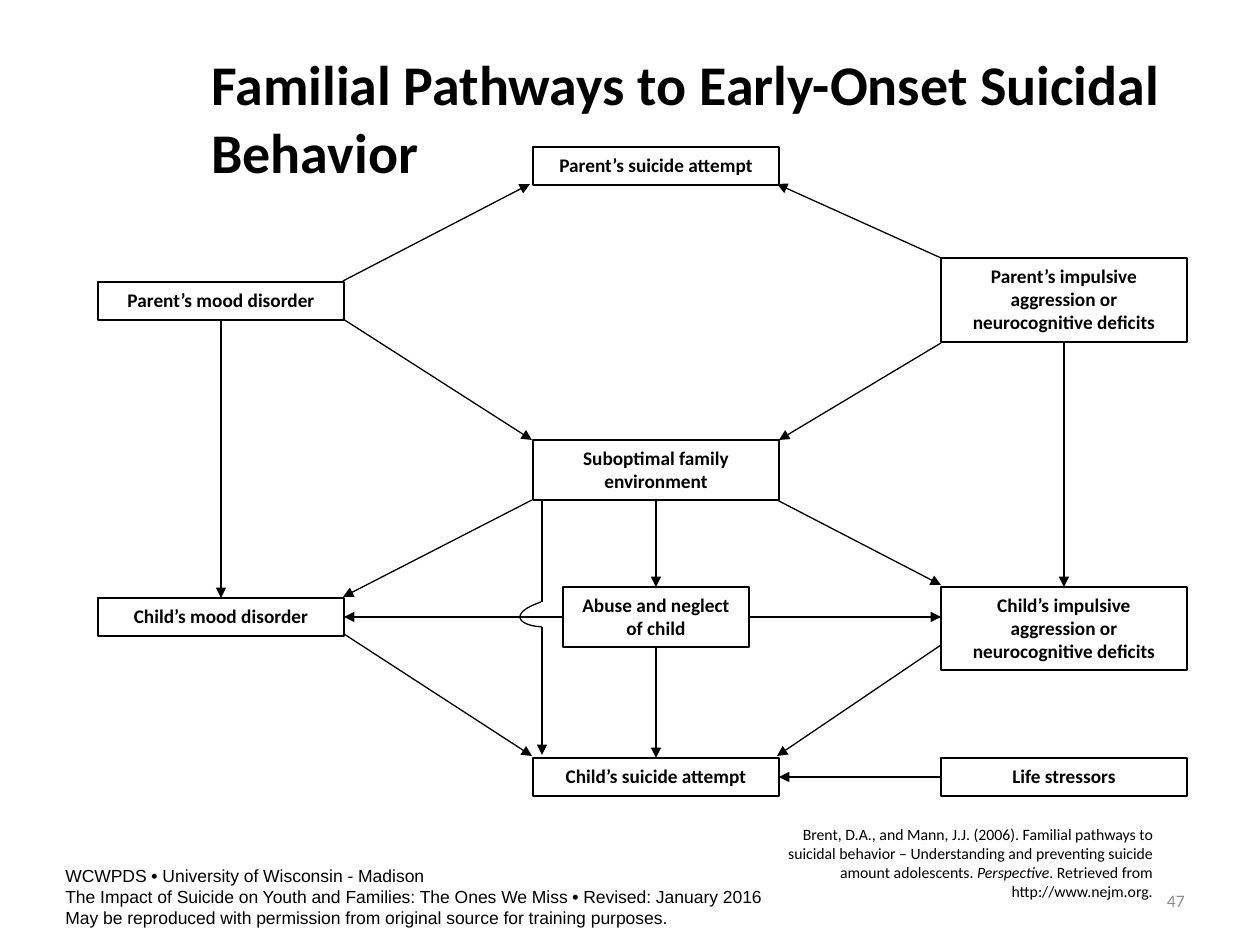
from lxml import etree
from pptx import Presentation
from pptx import util as u
from pptx.dml.color import RGBColor
from pptx.enum import shapes, text
from pptx.oxml.ns import qn

SCALE = 914400 / 126
TOP, LEFT, BOTTOM, RIGHT = range(4)
SIDE_W, SINGLE_H, DOUBLE_H = 246, 38, 60
COL_L, COL_M, COL_R = 98, 533, 941

BOXES = {
    "parent attempt": ("Parent’s suicide attempt", COL_M, 147, SIDE_W, SINGLE_H),
    "parent mood": ("Parent’s mood disorder", COL_L, 282, SIDE_W, SINGLE_H),
    "child mood": ("Child’s mood disorder", COL_L, 598, SIDE_W, SINGLE_H),
    "family": ("Suboptimal family environment", COL_M, 440, SIDE_W, DOUBLE_H),
    "abuse": ("Abuse and neglect of child", 563, 587, 186, DOUBLE_H),
    "child attempt": ("Child’s suicide attempt", COL_M, 758, SIDE_W, SINGLE_H),
    "stressors": ("Life stressors", COL_R, 758, SIDE_W, SINGLE_H),
    "child impulsive": ("Child’s impulsive aggression or neurocognitive deficits",
                        COL_R, 587, SIDE_W, 83),
    "parent impulsive": ("Parent’s impulsive aggression or neurocognitive deficits",
                         COL_R, 258, SIDE_W, 84),
}

ARROWS = [
    ((343, 281), (530, 184)),
    ((343, 319), (532, 440)),
    (("parent mood", BOTTOM), ("child mood", TOP)),
    ((532, 500), (343, 597)),
    ((344, 634), (532, 756)),
    ((777, 500), (941, 585)),
    ((941, 645), (777, 756)),
    (("stressors", LEFT), ("child attempt", RIGHT)),
    (("abuse", LEFT), ("child mood", RIGHT)),
    (("abuse", RIGHT), (941, 617)),
    (("family", BOTTOM), ("abuse", TOP)),
    ((542, 627), (542, 755)),
    (("abuse", BOTTOM), ("child attempt", TOP)),
    ((941, 258), (777, 184)),
    ((941, 343), (779, 440)),
    (("parent impulsive", BOTTOM), ("child impulsive", TOP)),
]
PLAIN_LINE = ((542, 500), (542, 602))
BRIDGE = [((542, 627), (528, 626), (520, 622), (520, 617)),
          ((520, 617), (520, 612), (527, 607), (541, 602))]

TITLE = [[("Familial Pathways to Early-Onset Suicidal Behavior", "b")]]
FOOTER = [
    [("WCWPDS ", ""), ("• ", "b"), ("University of Wisconsin - Madison", "")],
    [("The Impact of Suicide on Youth and Families: The Ones We Miss ", ""),
     ("• ", "b"), ("Revised: January 2016", "")],
    [("May be reproduced with permission from original source for training purposes.", "")],
]
CITATION = [[
    ("Brent, D.A., and Mann, J.J. (2006). Familial pathways to suicidal behavior – "
     "Understanding and preventing suicide amount adolescents. ", ""),
    ("Perspective", "i"),
    (". Retrieved from http://www.nejm.org.", ""),
]]


def px(n):
    return u.Emu(round(n * SCALE))


def color(value):
    return RGBColor.from_string(value)


def write(sp, paragraphs, size, align, anchor, font="Calibri", ink="000000", after=0):
    tf = sp.text_frame
    tf.word_wrap = True
    tf.vertical_anchor = anchor
    for i, runs in enumerate(paragraphs):
        p = tf.add_paragraph() if i else tf.paragraphs[0]
        p.alignment = align
        p.space_after = u.Pt(after)
        for words, style in runs:
            r = p.add_run()
            r.text = words
            r.font.name = font
            r.font.size = u.Pt(size)
            r.font.bold = style == "b"
            r.font.italic = style == "i"
            r.font.color.rgb = color(ink)


def textbox(s, place, *args, **kwargs):
    write(s.shapes.add_textbox(*map(px, place)), *args, **kwargs)


def outline(sp):
    sp.line.color.rgb = color("000000")
    sp.line.width = u.Pt(0.75)


def add_box(s, label, *place):
    sp = s.shapes.add_shape(shapes.MSO_SHAPE.RECTANGLE, *map(px, place))
    sp.shadow.inherit = False
    sp.fill.solid()
    sp.fill.fore_color.rgb = color("FFFFFF")
    outline(sp)
    write(sp, [[(label, "b")]], 11, text.PP_ALIGN.CENTER, text.MSO_ANCHOR.TOP, after=10)
    return sp


def add_line(s, boxes, start, end, arrow=True):
    points = [(0, 0) if e[0] in boxes else e for e in (start, end)]
    line = s.shapes.add_connector(shapes.MSO_CONNECTOR.STRAIGHT,
                                  *(px(n) for point in points for n in point))
    for e, join in ((start, line.begin_connect), (end, line.end_connect)):
        if e[0] in boxes:
            join(boxes[e[0]], e[1])
    outline(line)
    if arrow:
        etree.SubElement(line.line._get_or_add_ln(), qn("a:tailEnd"), type="triangle")
    etree.SubElement(line._element.spPr, qn("a:effectLst"))


def bezier(a, b, c, d, steps=12):
    for i in range(steps + 1):
        t = i / steps
        k = 1 - t
        yield tuple(k**3 * w + 3 * k * k * t * x + 3 * k * t * t * y + t**3 * z
                    for w, x, y, z in zip(a, b, c, d))


def add_bridge(s):
    first, *rest = [point for curve in BRIDGE for point in bezier(*curve)]
    builder = s.shapes.build_freeform(px(first[0]), px(first[1]))
    builder.add_line_segments([(px(x), px(y)) for x, y in rest], close=False)
    sp = builder.convert_to_shape()
    sp.shadow.inherit = False
    sp.fill.background()
    outline(sp)


def main():
    prs = Presentation()
    prs.slide_width, prs.slide_height = px(1260), px(945)
    s = prs.slides.add_slide(prs.slide_layouts[6])
    left, right = text.PP_ALIGN.LEFT, text.PP_ALIGN.RIGHT
    top, middle = text.MSO_ANCHOR.TOP, text.MSO_ANCHOR.MIDDLE

    textbox(s, (53, 858, 819, 77), FOOTER, 10, left, middle, font="Arial")
    textbox(s, (199, 38, 998, 158), TITLE, 32, left, middle)
    textbox(s, (1134, 876, 63, 50), [[("47", "")]], 10, right, middle, ink="8C8C8C")
    boxes = {name: add_box(s, *box) for name, box in BOXES.items()}
    for start, end in ARROWS:
        add_line(s, boxes, start, end)
    add_line(s, boxes, *PLAIN_LINE, arrow=False)
    add_bridge(s)
    textbox(s, (766, 819, 399, 89), CITATION, 9, right, top, after=10)
    prs.save("out.pptx")


if __name__ == "__main__":
    main()
